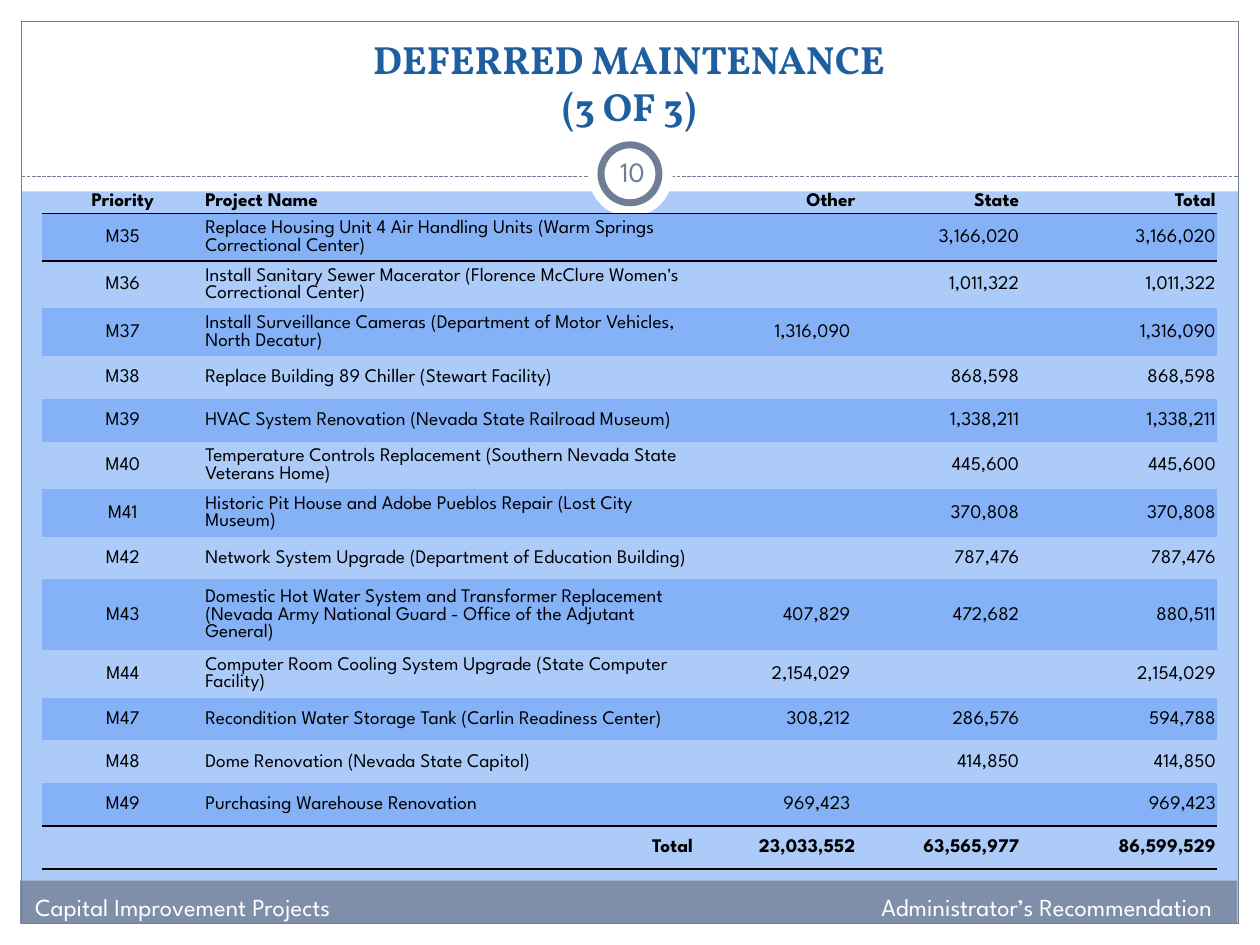
from typing import NamedTuple, Optional

from lxml import etree
from pptx import Presentation
from pptx.dml.color import RGBColor
from pptx.enum.dml import MSO_LINE
from pptx.enum.shapes import MSO_CONNECTOR, MSO_SHAPE
from pptx.enum.text import MSO_ANCHOR, MSO_AUTO_SIZE, PP_ALIGN
from pptx.oxml.ns import qn
from pptx.util import Inches, Pt

RECT, OVAL = MSO_SHAPE.RECTANGLE, MSO_SHAPE.OVAL
LEFT, CENTER, RIGHT = PP_ALIGN.LEFT, PP_ALIGN.CENTER, PP_ALIGN.RIGHT
MIDDLE, BOTTOM, TOP = MSO_ANCHOR.MIDDLE, MSO_ANCHOR.BOTTOM, MSO_ANCHOR.TOP
SANS, SERIF = "League Spartan", "Vollkorn"
WHITE, BLACK, SLATE, BAND = "FFFFFF", "000000", "707E95", "85B2F6"
NO_STYLE = "{2D5ABB26-0587-4C30-8999-92F81FD0307C}"
CELL_SIZE = 11


class Panel(NamedTuple):
    kind: int
    left: float
    top: float
    width: float
    height: float
    fill: Optional[str] = None
    line: Optional[str] = None
    weight: float = 0.75


class Label(NamedTuple):
    text: str
    left: float
    top: float
    width: float
    height: float
    size: float
    color: str
    align: int
    anchor: int
    margins: tuple  # left, top, right, bottom


class Project(NamedTuple):
    priority: str
    name: str
    other: str
    state: str
    total: str
    height: float


ONE, TWO, THREE = 0.34, 0.37, 0.56  # row heights by number of text lines
PROJECTS = [
    Project("M35", "Replace Housing Unit 4 Air Handling Units (Warm Springs Correctional Center)",
            "", "3,166,020", "3,166,020", TWO),
    Project("M36", "Install Sanitary Sewer Macerator (Florence McClure Women's Correctional Center)",
            "", "1,011,322", "1,011,322", TWO),
    Project("M37", "Install Surveillance Cameras (Department of Motor Vehicles, North Decatur)",
            "1,316,090", "", "1,316,090", TWO),
    Project("M38", "Replace Building 89 Chiller (Stewart Facility)", "", "868,598", "868,598", ONE),
    Project("M39", "HVAC System Renovation (Nevada State Railroad Museum)",
            "", "1,338,211", "1,338,211", ONE),
    Project("M40", "Temperature Controls Replacement (Southern Nevada State Veterans Home)",
            "", "445,600", "445,600", TWO),
    Project("M41", "Historic Pit House and Adobe Pueblos Repair (Lost City Museum)",
            "", "370,808", "370,808", TWO),
    Project("M42", "Network System Upgrade (Department of Education Building)",
            "", "787,476", "787,476", ONE),
    Project("M43", "Domestic Hot Water System and Transformer Replacement (Nevada Army National Guard"
            " - Office of the Adjutant General)", "407,829", "472,682", "880,511", THREE),
    Project("M44", "Computer Room Cooling System Upgrade (State Computer Facility)",
            "2,154,029", "", "2,154,029", TWO),
    Project("M47", "Recondition Water Storage Tank (Carlin Readiness Center)",
            "308,212", "286,576", "594,788", ONE),
    Project("M48", "Dome Renovation (Nevada State Capitol)", "", "414,850", "414,850", ONE),
    Project("M49", "Purchasing Warehouse Renovation", "969,423", "", "969,423", ONE),
]
HEADER = Project("Priority", "Project Name", "Other", "State", "Total", 0.18)
TOTALS = Project("", "Total", "23,033,552", "63,565,977", "86,599,529", ONE)
COLUMNS = [1.29] + [0.65] * 4 + [1.29, 1.29, 1.3, 1.56]
NAME_FIRST, NAME_LAST, OTHER = 1, 5, 6

FRAME = [
    Panel(RECT, 0, 7.33, 10, 0.17, WHITE),
    Panel(RECT, 0, 0, 10, 1.52, WHITE),
    Panel(RECT, 0, 0, 0.17, 7.5, WHITE),
    Panel(RECT, 9.83, 0, 0.17, 7.5, WHITE),
    Panel(RECT, 0.16, 6.99, 9.66, 0.34, "7F8FA9"),
    Panel(RECT, 0.17, 0.17, 9.66, 7.16, None, SLATE),
]
BADGE = [
    Panel(OVAL, 4.67, 1.05, 0.67, 0.67, WHITE),
    Panel(OVAL, 4.77, 1.15, 0.46, 0.46, WHITE, SLATE, 4),
]
FOOTER_MARGINS = (0.45, 0.05, 0.1, 0.05)
LABELS = [
    Label("10", 4.77, 1.12, 0.5, 0.48, 16, SLATE, CENTER, MIDDLE, (0.05,) * 4),
    Label("Capital Improvement Projects", -0.17, 7.03, 6.33, 0.34, 14, WHITE, LEFT, TOP,
          FOOTER_MARGINS),
    Label("Administrator’s Recommendation", 3.39, 7.03, 6.33, 0.34, 14, WHITE, RIGHT, TOP,
          FOOTER_MARGINS),
]


def rgb(value: str) -> RGBColor:
    return RGBColor.from_string(value)


def format_font(font, color: str, **values) -> None:
    for name, value in values.items():
        setattr(font, name, value)
    font.color.rgb = rgb(color)


def set_margins(holder, margins: tuple) -> None:
    for side, value in zip(("left", "top", "right", "bottom"), margins):
        setattr(holder, f"margin_{side}", Inches(value))


def draw_panel(page, panel: Panel) -> None:
    shape = page.shapes.add_shape(panel.kind, *map(Inches, panel[1:5]))
    shape.shadow.inherit = False
    if panel.fill:
        shape.fill.solid()
        shape.fill.fore_color.rgb = rgb(panel.fill)
    else:
        shape.fill.background()
    if panel.line:
        shape.line.color.rgb = rgb(panel.line)
        shape.line.width = Pt(panel.weight)
    else:
        shape.line.fill.background()


def draw_divider(page) -> None:
    line = page.shapes.add_connector(MSO_CONNECTOR.STRAIGHT, *map(Inches, (0.17, 1.4, 9.83, 1.4)))
    line.line.color.rgb = rgb(SLATE)
    line.line.width = Pt(0.75)
    line.line.dash_style = MSO_LINE.SQUARE_DOT
    etree.SubElement(line._element.spPr, qn("a:effectLst"))


def draw_label(page, label: Label) -> None:
    box = page.shapes.add_textbox(*map(Inches, label[1:5]))
    frame = box.text_frame
    frame.word_wrap = True
    frame.vertical_anchor = label.anchor
    set_margins(frame, label.margins)
    para = frame.paragraphs[0]
    para.alignment = label.align
    span = para.add_run()
    span.text = label.text
    format_font(span.font, label.color, name=SANS, size=Pt(label.size))


def place_title(page) -> None:
    title = page.shapes.title
    title.left, title.top, title.width, title.height = map(Inches, (0.33, 0.25, 9.33, 0.83))
    frame = title.text_frame
    frame.text = "DEFERRED MAINTENANCE\v(3 OF 3)"
    frame.auto_size = MSO_AUTO_SIZE.NONE
    frame.vertical_anchor = BOTTOM
    para = frame.paragraphs[0]
    para.alignment = CENTER
    for span in para.runs:
        format_font(span.font, "1F5FA0", name=SERIF, size=Pt(22.5), bold=True)
    page.shapes._spTree.append(title._element)  # in front of the frame


def add_border(cell, tag: str) -> None:
    line = etree.SubElement(cell._tc.get_or_add_tcPr(), qn(tag), w=str(Pt(1)))
    fill = etree.SubElement(line, qn("a:solidFill"))
    etree.SubElement(fill, qn("a:srgbClr"), val=BLACK)


def fill_cell(cell, text: str, align: int, bold: bool) -> None:
    cell.vertical_anchor = MIDDLE
    para = cell.text_frame.paragraphs[0]
    para.alignment = align
    if text:
        span = para.add_run()
        span.text = text
        format_font(span.font, BLACK, name=SANS, size=Pt(CELL_SIZE), bold=bold)
    else:
        etree.SubElement(para._p, qn("a:endParaRPr"), sz=str(CELL_SIZE * 100))


def draw_table(page) -> None:
    rows = [HEADER, *PROJECTS, TOTALS]
    last = len(rows) - 1
    ruled = {0, last - 1, last}  # rows with a line below
    height = sum(row.height for row in rows)
    table = page.shapes.add_table(len(rows), len(COLUMNS), Inches(0.33), Inches(1.5),
                                  Inches(sum(COLUMNS)), Inches(height)).table
    table.first_row = table.horz_banding = False
    table._tbl.tblPr.find(qn("a:tableStyleId")).text = NO_STYLE
    for column, width in zip(table.columns, COLUMNS):
        column.width = Inches(width)

    for r, row in enumerate(rows):
        table.rows[r].height = Inches(row.height)
        is_data = 0 < r < last
        name_column = NAME_LAST if r == last else NAME_FIRST
        texts = {0: row.priority, name_column: row.name, 6: row.other, 7: row.state, 8: row.total}
        aligns = {0: CENTER, name_column: RIGHT if r == last else LEFT}
        for c in range(len(COLUMNS)):
            cell = table.cell(r, c)
            inset = 0.05 if is_data and c == OTHER else 0.01
            set_margins(cell, (0.01, 0.01, inset, 0))
            fill_cell(cell, texts.get(c, ""), aligns.get(c, RIGHT), not is_data)
            if r - 1 in ruled:
                add_border(cell, "a:lnT")
            if r in ruled:
                add_border(cell, "a:lnB")
            if is_data and r % 2:
                cell.fill.solid()
                cell.fill.fore_color.rgb = rgb(BAND)
            else:
                cell.fill.background()
        if r < last:
            table.cell(r, NAME_FIRST).merge(table.cell(r, NAME_LAST))


def main() -> None:
    deck = Presentation()
    deck.slide_width, deck.slide_height = Inches(10), Inches(7.5)
    page = deck.slides.add_slide(deck.slide_layouts[5])
    page.background.fill.solid()
    page.background.fill.fore_color.rgb = rgb("ACCBF9")

    # Frame, divider and number badge
    for panel in FRAME:
        draw_panel(page, panel)
    draw_divider(page)
    for panel in BADGE:
        draw_panel(page, panel)

    # Words and table
    place_title(page)
    for label in LABELS:
        draw_label(page, label)
    draw_table(page)
    deck.save("out.pptx")


if __name__ == "__main__":
    main()
